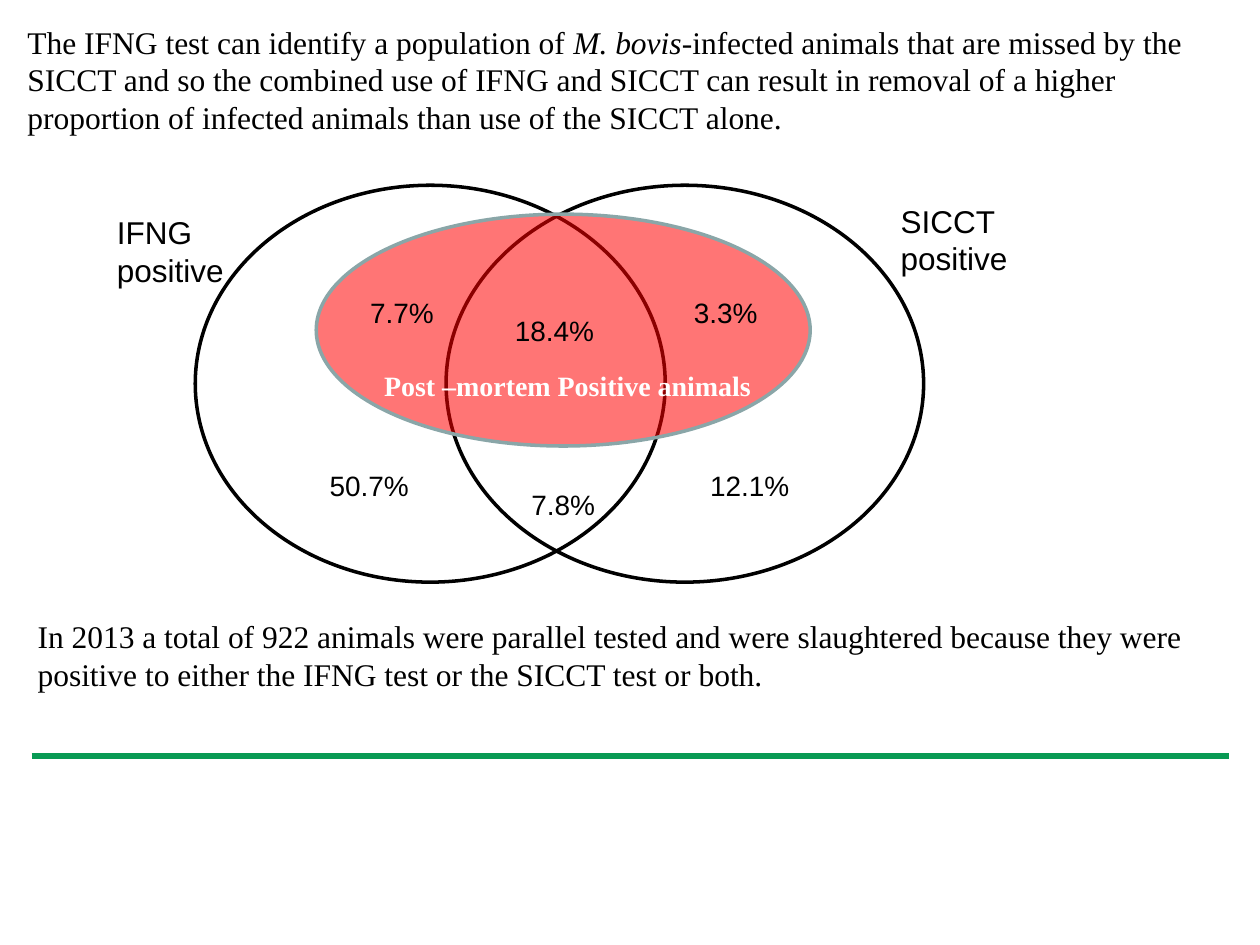
from lxml import etree
from pptx import Presentation
from pptx.dml.color import RGBColor
from pptx.enum.shapes import MSO_CONNECTOR, MSO_SHAPE
from pptx.enum.text import MSO_ANCHOR, PP_ALIGN
from pptx.oxml.ns import qn
from pptx.util import Inches, Pt

STRAIGHT = MSO_CONNECTOR.STRAIGHT
OVAL = MSO_SHAPE.OVAL
TOP = MSO_ANCHOR.TOP
LEFT = PP_ALIGN.LEFT
CENTER = PP_ALIGN.CENTER

SERIF = {"name": "Times New Roman", "size": Pt(18)}
SANS = {"name": "Arial", "size": Pt(18)}
PERCENT = {"name": "Arial", "size": Pt(16)}
CAPTION = {"name": "Times New Roman", "size": Pt(16), "bold": True}
ITALIC = {"italic": True}

BLACK = "000000"
WHITE = "FFFFFF"
GREEN = "089A54"
RED = "FF0000"
GREY = "8AA6A8"


def color(value):
    return RGBColor.from_string(value)


class SlideBuilder:
    percent_width = 0.94
    percent_height = 0.36

    def __init__(self, slide):
        self.slide = slide

    def rule(self, left, right, y, line_color, width):
        connector = self.slide.shapes.add_connector(
            STRAIGHT, Inches(left), Inches(y), Inches(right), Inches(y))
        connector.line.color.rgb = color(line_color)
        connector.line.width = Pt(width)
        etree.SubElement(connector._element.spPr, qn("a:effectLst"))

    def ellipse(self, box, line_color, fill_color=None, opacity=100):
        shape = self.slide.shapes.add_shape(OVAL, *map(Inches, box))
        shape.shadow.inherit = False
        shape.line.color.rgb = color(line_color)
        shape.line.width = Pt(2)
        if fill_color is None:
            shape.fill.background()
            return
        shape.fill.solid()
        shape.fill.fore_color.rgb = color(fill_color)
        fill = shape._element.spPr.find(qn("a:solidFill"))
        etree.SubElement(fill[0], qn("a:alpha"), val=str(opacity * 1000))

    def text(self, box, paragraphs, style, font_color=BLACK, alignment=LEFT):
        frame = self.slide.shapes.add_textbox(*map(Inches, box)).text_frame
        frame.word_wrap = True
        frame.vertical_anchor = TOP
        for index, runs in enumerate(paragraphs):
            paragraph = frame.add_paragraph() if index else frame.paragraphs[0]
            paragraph.alignment = alignment
            for content, extra in runs:
                run = paragraph.add_run()
                run.text = content
                run.font.color.rgb = color(font_color)
                for name, value in {**style, **extra}.items():
                    setattr(run.font, name, value)

    def percent(self, content, center_x, center_y):
        width, height = self.percent_width, self.percent_height
        box = (center_x - width / 2, center_y - height / 2, width, height)
        self.text(box, [[(content, {})]], PERCENT, alignment=CENTER)


def main():
    presentation = Presentation()
    presentation.slide_width = Inches(10)
    presentation.slide_height = Inches(7.5)
    slide = presentation.slides.add_slide(presentation.slide_layouts[6])
    builder = SlideBuilder(slide)

    builder.rule(0.25, 9.75, 6, GREEN, 3)
    builder.text((0.2, 4.85, 9.8, 2.65), [[(
        "In 2013 a total of 922 animals were parallel tested and were "
        "slaughtered because they were positive to either the IFNG test "
        "or the SICCT test or both.", {})]], SERIF)

    builder.ellipse((1.55, 1.47, 3.73, 3.15), BLACK)
    builder.ellipse((3.54, 1.47, 3.79, 3.15), BLACK)
    builder.ellipse((2.51, 1.7, 3.92, 1.84), GREY, RED, 54)

    percentages = [
        ("50.7%", 2.93, 3.85),
        ("3.3%", 5.76, 2.48),
        ("7.7%", 3.19, 2.48),
        ("18.4%", 4.4, 2.62),
        ("12.1%", 5.95, 3.85),
        ("7.8%", 4.47, 4),
    ]
    for content, center_x, center_y in percentages:
        builder.percent(content, center_x, center_y)

    builder.text((0.83, 1.64, 1.56, 0.71), [[("IFNG positive", {})]], SANS)
    builder.text((7.05, 1.55, 1.12, 0.71),
                 [[("SICCT", {})], [("positive", {})]], SANS)
    builder.text((2.95, 2.88, 4.09, 0.37),
                 [[("Post –mortem Positive animals", {})]], CAPTION, WHITE)
    builder.text((0.12, 0.13, 9.76, 1.01), [[
        ("The IFNG test can identify a population of ", {}),
        ("M. bovis", ITALIC),
        ("-infected animals that are missed by the SICCT and so the "
         "combined use of IFNG and SICCT can result in removal of a higher "
         "proportion of infected animals than use of the SICCT alone.", {}),
    ]], SERIF)

    presentation.save("out.pptx")


if __name__ == "__main__":
    main()
